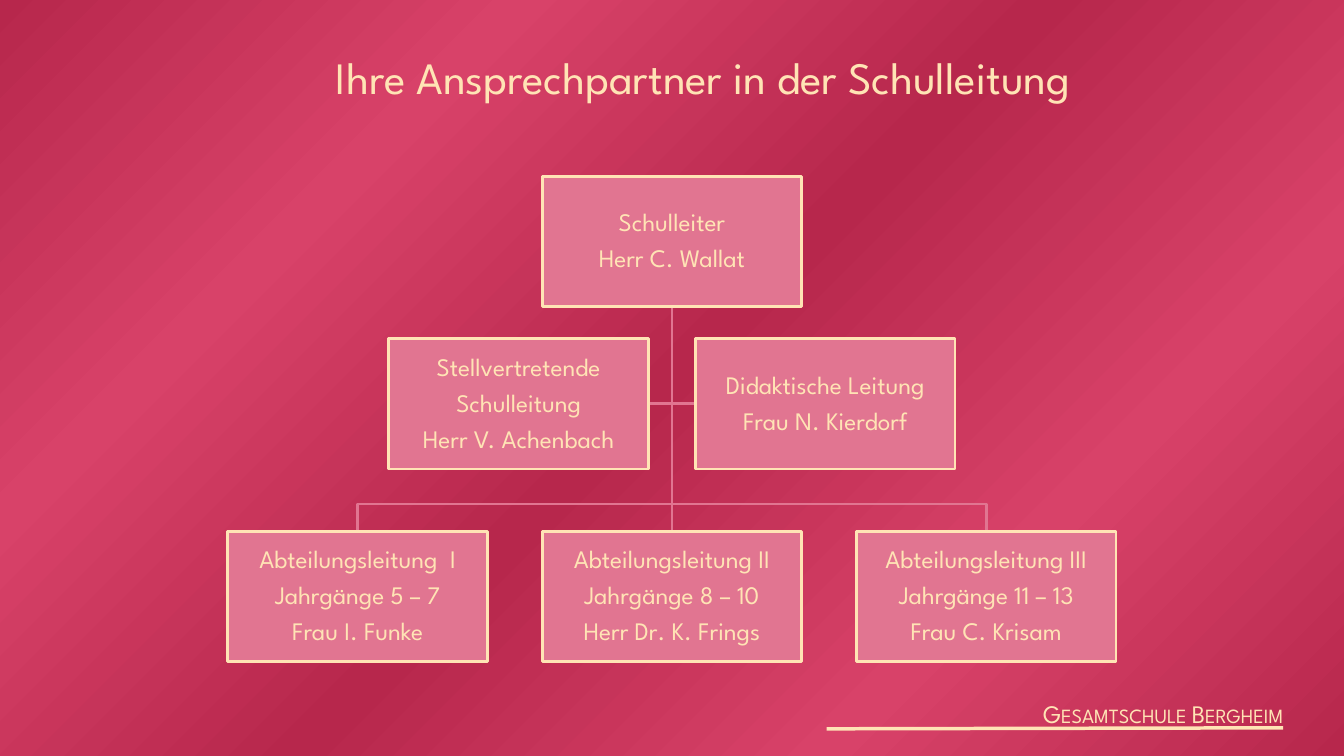
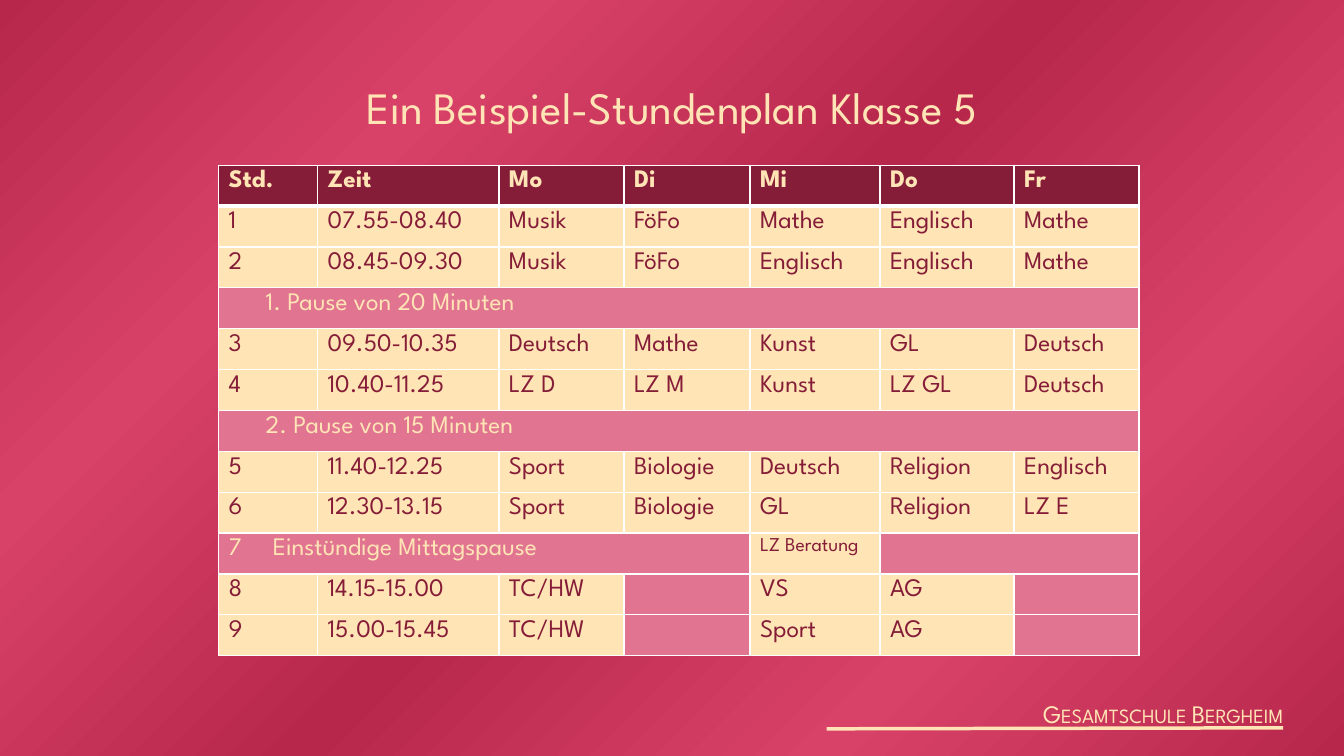
from lxml.etree import SubElement
from pptx import Presentation
from pptx.dml.color import RGBColor
from pptx.enum.shapes import MSO_CONNECTOR, MSO_SHAPE
from pptx.enum.text import MSO_ANCHOR, MSO_AUTO_SIZE, PP_ALIGN
from pptx.oxml.ns import qn
from pptx.util import Pt

FONT = "League Spartan"
CREAM = RGBColor(0xFF, 0xE4, 0xB5)
ROSE = RGBColor(0xE1, 0x75, 0x91)
WINE = RGBColor(0x85, 0x1D, 0x38)
WHITE = RGBColor(0xFF, 0xFF, 0xFF)
CRIMSON = RGBColor(0xB7, 0x27, 0x4C)
CORAL = RGBColor(0xD8, 0x42, 0x69)

HEAD = ["Schulleiter", "Herr C. Wallat"]
DEPUTIES = [
    ["Stellvertretende", "Schulleitung", "Herr V. Achenbach"],
    ["Didaktische Leitung", "Frau N. Kierdorf"],
]
DEPARTMENTS = [
    ["Abteilungsleitung  I", "Jahrgänge 5 – 7", "Frau I. Funke"],
    ["Abteilungsleitung II", "Jahrgänge 8 – 10", "Herr Dr. K. Frings"],
    ["Abteilungsleitung III", "Jahrgänge 11 – 13", "Frau C. Krisam"],
]

COL_WIDTHS = [70.6, 129.6, 89.3, 90, 92.9, 95.8, 89.3]
TIMETABLE = [
    ["Std.", "Zeit", "Mo", "Di", "Mi", "Do", "Fr"],
    ["1", "07.55-08.40", "Musik", "FöFo", "Mathe", "Englisch", "Mathe"],
    ["2", "08.45-09.30", "Musik", "FöFo", "Englisch", "Englisch", "Mathe"],
    ["1. Pause von 20 Minuten"] + [None] * 6,
    ["3", "09.50-10.35", "Deutsch", "Mathe", "Kunst", "GL", "Deutsch"],
    ["4", "10.40-11.25", "LZ D", "LZ M", "Kunst", "LZ GL", "Deutsch"],
    ["2. Pause von 15 Minuten"] + [None] * 6,
    ["5", "11.40-12.25", "Sport", "Biologie", "Deutsch", "Religion", "Englisch"],
    ["6", "12.30-13.15", "Sport", "Biologie", "GL", "Religion", "LZ E"],
    ["7\tEinstündige Mittagspause", None, None, None, "LZ Beratung", "", None],
    ["8", "14.15-15.00", "TC/HW", "", "VS", "AG", ""],
    ["9", "15.00-15.45", "TC/HW", "", "Sport", "AG", ""],
]


def set_font(p, size=18, color=CREAM, bold=False):
    """Set the font of a paragraph."""
    f = p.font
    f.name, f.size, f.bold = FONT, Pt(size), bold
    f.color.rgb = color


def set_line(sp, color, width):
    """Set the outline of a shape or connector."""
    sp.line.color.rgb = color
    sp.line.width = Pt(width)


def set_background(master):
    """Fill the master with diagonal bands of red."""
    fill = master.background.fill
    fill.gradient()
    fill.gradient_angle = 315
    stops = next(master.element.iter(qn("a:gsLst")))
    for stop in list(stops):
        stops.remove(stop)
    for i, color in enumerate([CRIMSON, CORAL, CRIMSON, CORAL, CRIMSON]):
        stop = SubElement(stops, qn("a:gs"), pos=str(i * 25000))
        SubElement(stop, qn("a:srgbClr"), val=str(color))


def add_footer(s, layout, x, y, w, h):
    """Place the school name over a rule and hand both to the layout."""
    name = s.shapes.add_textbox(Pt(x + w - 298), Pt(y), Pt(298), Pt(h))
    tf = name.text_frame
    tf.word_wrap = True
    tf.margin_right = 0
    p = tf.paragraphs[0]
    p.alignment = PP_ALIGN.RIGHT
    r = p.add_run()
    r.text = "Gesamtschule Bergheim"
    set_font(p)
    r.font.language_id = None
    next(p._p.iter(qn("a:rPr"))).set("cap", "small")
    rule = s.shapes.add_connector(
        MSO_CONNECTOR.STRAIGHT, Pt(x), Pt(y + 25.2), Pt(x + w), Pt(y + 24.5))
    set_line(rule, CREAM, 2.5)
    SubElement(rule.element.spPr, qn("a:effectLst"))
    for sp in (name, rule):
        layout.shapes.element.append(sp.element)


def add_title(s, text, x, y, w, h=46):
    """Move and format the title placeholder."""
    sp = s.shapes.title
    sp.left, sp.top, sp.width, sp.height = Pt(x), Pt(y), Pt(w), Pt(h)
    tf = sp.text_frame
    tf.text = text
    tf.auto_size = MSO_AUTO_SIZE.NONE
    tf.vertical_anchor = MSO_ANCHOR.TOP
    p = tf.paragraphs[0]
    p.alignment = PP_ALIGN.CENTER
    set_font(p, 32)


def add_link(s, *points):
    """Draw an angled line through the points."""
    pts = [(Pt(x), Pt(y)) for x, y in points]
    builder = s.shapes.build_freeform(*pts[0])
    builder.add_line_segments(pts[1:], close=False)
    sp = builder.convert_to_shape()
    sp.shadow.inherit = False
    sp.fill.background()
    set_line(sp, ROSE, 2)


def add_card(s, lines, cx, y, w, h):
    """Draw one box of the organisation chart around a centre line."""
    sp = s.shapes.add_shape(MSO_SHAPE.RECTANGLE, Pt(cx - w / 2), Pt(y), Pt(w), Pt(h))
    sp.shadow.inherit = False
    sp.fill.solid()
    sp.fill.fore_color.rgb = ROSE
    set_line(sp, CREAM, 2)
    tf = sp.text_frame
    tf.word_wrap = True
    tf.vertical_anchor = MSO_ANCHOR.MIDDLE
    tf.margin_left = tf.margin_right = tf.margin_top = tf.margin_bottom = Pt(0.9)
    tf.text = "\n".join(lines)
    for p in tf.paragraphs:
        p.alignment = PP_ALIGN.CENTER
        p.line_spacing = 0.9
        p.space_after = Pt(6.3)
        set_font(p)


def add_org_chart(s, x, y, w, h):
    """Draw the three levels of the school management."""
    card_w, card_h, bus_gap = 185.5, 93, 19.5
    cx, head_bottom = x + w / 2, y + card_h
    deputy_y, department_y = y + 116, y + h - card_h
    step = (w - card_w) / 2
    cards = [(HEAD, cx, y)]
    for lines, side in zip(DEPUTIES, (-1, 1)):
        mid = deputy_y + card_h / 2
        add_link(s, (cx, head_bottom), (cx, mid), (cx + side * 17, mid))
        cards.append((lines, cx + side * 109.5, deputy_y))
    for lines, side in zip(DEPARTMENTS, (-1, 0, 1)):
        end, bus_y = cx + side * step, department_y - bus_gap
        add_link(s, (cx, head_bottom), (cx, bus_y), (end, bus_y), (end, department_y))
        cards.append((lines, end, department_y))
    for lines, card_cx, card_y in cards:
        add_card(s, lines, card_cx, card_y, card_w, card_h)


def set_borders(cell, bottom=1, top=1):
    """Give a cell white borders."""
    tcPr = cell._tc.get_or_add_tcPr()
    for side, width in (("L", 1), ("R", 1), ("T", top), ("B", bottom)):
        ln = SubElement(tcPr, qn("a:ln" + side), w=str(Pt(width)))
        fill = SubElement(ln, qn("a:solidFill"))
        SubElement(fill, qn("a:srgbClr"), val=str(WHITE))


def fill_cell(cell, text, row, is_break):
    """Write and colour one cell of the timetable."""
    set_borders(cell, bottom=3 if row == 0 else 1, top=3 if row == 1 else 1)
    cell.fill.solid()
    cell.fill.fore_color.rgb = WINE if row == 0 else ROSE if is_break else CREAM
    cell.text = text or ""
    p = cell.text_frame.paragraphs[0]
    color = CREAM if row == 0 or is_break else WINE
    set_font(p, 14 if text == "LZ Beratung" else 18, color, row == 0)
    if text and "\t" in text:
        tabs = SubElement(p._p.get_or_add_pPr(), qn("a:tabLst"))
        SubElement(tabs, qn("a:tab"), pos=str(Pt(31.5)), algn="l")
        pPr = p._p.pPr
        pPr.insert(0, tabs)
    elif text and is_break:
        cell.margin_left = Pt(33.6)


def add_timetable(s, x, y, w, h):
    """Draw the timetable, where None continues the cell to its left."""
    rows, cols = len(TIMETABLE), len(COL_WIDTHS)
    tbl = s.shapes.add_table(rows, cols, Pt(x), Pt(y), Pt(w), Pt(h)).table
    tbl.first_row = tbl.horz_banding = False
    for col, width in zip(tbl.columns, COL_WIDTHS):
        col.width = Pt(width)
    for i, texts in enumerate(TIMETABLE):
        tbl.rows[i].height = Pt(h / rows)
        for j, text in enumerate(texts):
            end = j
            while end + 1 < cols and texts[end + 1] is None:
                end += 1
            fill_cell(tbl.cell(i, j), text, i, not text or end > j)
            if text is not None and end > j:
                tbl.cell(i, j).merge(tbl.cell(i, end))


def main():
    """Build both slides and save them."""
    prs = Presentation()
    prs.slide_width, prs.slide_height = Pt(960), Pt(540)
    set_background(prs.slide_master)
    layout = prs.slide_layouts[5]

    s = prs.slides.add_slide(layout)
    add_footer(s, layout, 590.4, 495.4, 326.2, 28.8)
    add_title(s, "Ihre Ansprechpartner in der Schulleitung", 200.9, 31.7, 603.4)
    add_org_chart(s, 162.75, 126, 634.5, 346.5)

    s = prs.slides.add_slide(layout)
    add_title(s, "Ein Beispiel-Stundenplan Klasse 5", 171.4, 53.3, 617.8)
    add_timetable(s, 156.2, 118, sum(COL_WIDTHS), 350.4)
    prs.save("out.pptx")


if __name__ == "__main__":
    main()
